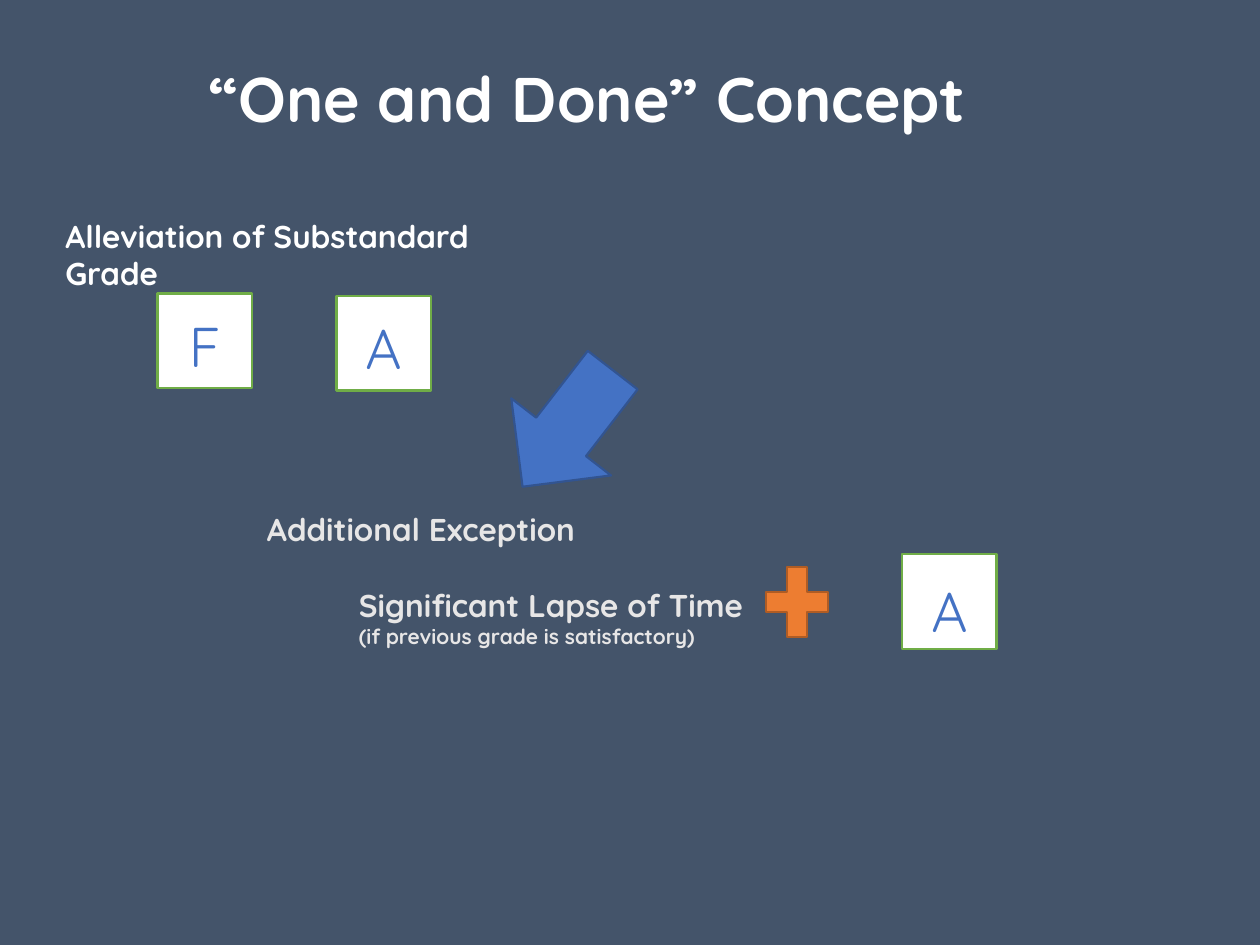
from dataclasses import dataclass

from pptx import Presentation
from pptx.dml.color import RGBColor
from pptx.enum.shapes import MSO_SHAPE as Shape
from pptx.enum.text import MSO_ANCHOR as Anchor, MSO_AUTO_SIZE as AutoSize, PP_ALIGN as Align
from pptx.util import Inches, Pt

COLORS = {
    "background": "44546A", "white": "FFFFFF", "pale": "E7E6E6",
    "blue": "4472C4", "navy": "325491", "green": "70AD47",
    "orange": "ED7D31", "brown": "AF5C24",
}
FONT = "Quicksand"
COLUMNS, ROWS = 100, 75
SLIDE_WIDTH, SLIDE_HEIGHT = Inches(10), Inches(7.5)
TILE_SIZE = 7.5


@dataclass
class Box:
    """A rectangle measured in columns and rows of the slide grid."""
    left: float
    top: float
    width: float
    height: float

    def inner(self, left, top, width, height):
        """Return a box placed relative to this one."""
        return Box(self.left + left, self.top + top, width, height)

    def place(self):
        """Return the position and size as slide lengths."""
        column, row = SLIDE_WIDTH / COLUMNS, SLIDE_HEIGHT / ROWS
        return [round(value * unit) for value, unit in
                zip((self.left, self.top, self.width, self.height), (column, row) * 2)]


def color(name):
    """Return the named colour."""
    return RGBColor.from_string(COLORS[name])


def set_values(target, values):
    """Set each attribute in a dict of values."""
    for name, value in values.items():
        setattr(target, name, value)


def write_text(shape, lines, color_name, bold=True, align=Align.LEFT):
    """Write (text, size) lines as paragraphs of a shape."""
    frame = shape.text_frame
    set_values(frame, {"word_wrap": True, "auto_size": AutoSize.NONE,
                       "vertical_anchor": Anchor.TOP})
    for index, (text, size) in enumerate(lines):
        paragraph = frame.paragraphs[0] if index == 0 else frame.add_paragraph()
        paragraph.alignment = align
        run = paragraph.add_run()
        run.text = text
        set_values(run.font, {"name": FONT, "size": Pt(size), "bold": bold})
        run.font.color.rgb = color(color_name)


def add_text(slide, box, lines, color_name, **options):
    """Add a text box."""
    write_text(slide.shapes.add_textbox(*box.place()), lines, color_name, **options)


def add_figure(slide, kind, box, fill, line, rotation=0):
    """Add a filled and outlined preset shape."""
    shape = slide.shapes.add_shape(kind, *box.place())
    shape.shadow.inherit = False
    shape.rotation = rotation
    shape.fill.solid()
    shape.fill.fore_color.rgb = color(fill)
    shape.line.color.rgb = color(line)
    shape.line.width = Pt(1.25)


def add_grade(slide, box, letter, drop=0.9):
    """Add a white tile with a grade letter lowered by the given rows."""
    add_figure(slide, Shape.RECTANGLE, box, "white", "green")
    add_text(slide, box.inner(-0.1, drop, 7.7, 6.4), [(letter, 32)], "blue",
             bold=False, align=Align.CENTER)


def add_title(slide, box):
    """Place and format the title placeholder."""
    title = slide.shapes.title
    set_values(title, dict(zip(("left", "top", "width", "height"), box.place())))
    write_text(title, [("“One and Done” Concept", 36)], "white", align=Align.CENTER)


def add_alleviation(slide, box):
    """Add the heading with the failed and the repeated grade."""
    add_grade(slide, box.inner(8.3, 6.6, TILE_SIZE, TILE_SIZE), "F")
    add_grade(slide, box.inner(22.5, 6.8, TILE_SIZE, TILE_SIZE), "A")
    add_text(slide, box.inner(0, 0, box.width, 7.1),
             [("Alleviation of Substandard Grade", 18)], "white")


def add_exception(slide, box):
    """Add the exception heading, its condition, the plus and the grade."""
    add_text(slide, box.inner(0, 0, 37.5, 4), [("Additional Exception", 18)], "pale")
    add_text(slide, box.inner(7.3, 6, 37.5, 6.1),
             [("Significant Lapse of Time", 18),
              ("(if previous grade is satisfactory)", 12)], "pale")
    add_figure(slide, Shape.MATH_PLUS, box.inner(39.7, 4, 6.7, 7.6), "orange", "brown")
    add_grade(slide, box.inner(51.4, 4, TILE_SIZE, TILE_SIZE), "A", drop=1.3)


def main():
    """Build and save the slide."""
    presentation = Presentation()
    set_values(presentation, {"slide_width": SLIDE_WIDTH, "slide_height": SLIDE_HEIGHT})
    slide = presentation.slides.add_slide(presentation.slide_layouts[5])
    slide.background.fill.solid()
    slide.background.fill.fore_color.rgb = color("background")
    add_title(slide, Box(13.3, 4.2, 66.7, 7.1))
    add_alleviation(slide, Box(4.2, 16.7, 37.5, 14.3))
    add_exception(slide, Box(20.2, 40, 58.9, 12.1))
    add_figure(slide, Shape.RIGHT_ARROW, Box(39.2, 29, 11.7, 10), "blue", "navy", 127.7)
    presentation.save("out.pptx")


if __name__ == "__main__":
    main()
